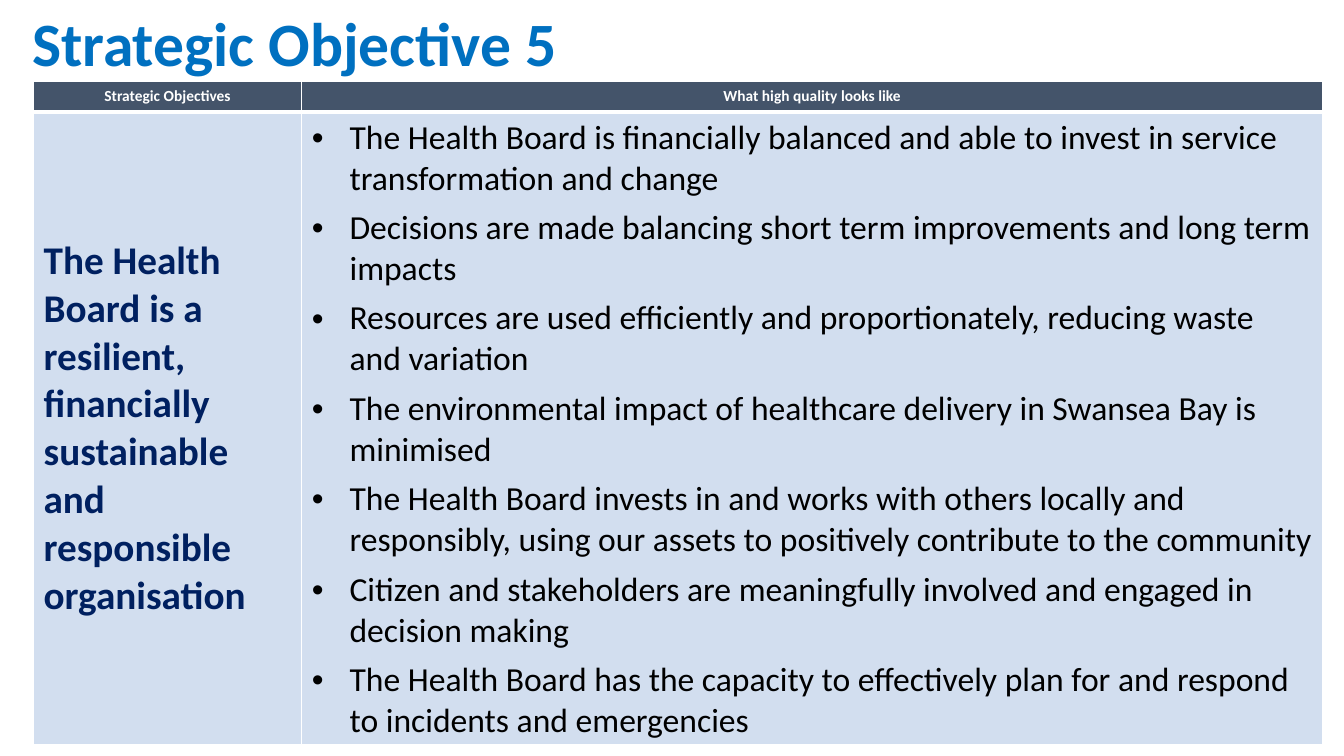
from lxml.etree import SubElement
from pptx import Presentation
from pptx.dml.color import RGBColor
from pptx.enum.text import MSO_ANCHOR, MSO_AUTO_SIZE, PP_ALIGN
from pptx.oxml import parse_xml
from pptx.oxml.ns import nsdecls, qn
from pptx.util import Pt

HEADINGS = ["Strategic Objectives", "What high quality looks like"]
OBJECTIVE = "The Health Board is a resilient, financially sustainable and responsible organisation"
QUALITIES = [
    "The Health Board is financially balanced and able to invest in service transformation and change",
    "Decisions are made balancing short term improvements and long term impacts",
    "Resources are used efficiently and proportionately, reducing waste and variation",
    "The environmental impact of healthcare delivery in Swansea Bay is minimised",
    "The Health Board invests in and works with others locally and responsibly, "
    "using our assets to positively contribute to the community",
    "Citizen and stakeholders are meaningfully involved and engaged in decision making",
    "The Health Board has the capacity to effectively plan for and respond to incidents and emergencies",
]


def add_span(para, text, size, color, bold):
    span = para.add_run()
    span.text = text
    span.font.name = "Calibri"
    span.font.size = Pt(size)
    span.font.bold = bold
    span.font.color.rgb = RGBColor.from_string(color)


def style_cell(cell, fill, bottom_width):
    cell.vertical_anchor = MSO_ANCHOR.MIDDLE
    cell.fill.solid()
    cell.fill.fore_color.rgb = RGBColor.from_string(fill)
    properties = cell._tc.get_or_add_tcPr()
    # Borders come before the fill in the cell properties
    for index, side in enumerate("LRTB"):
        width = Pt(bottom_width if side == "B" else 1)
        properties.insert(index, parse_xml(
            f'<a:ln{side} {nsdecls("a")} w="{width}"><a:solidFill>'
            f'<a:srgbClr val="FFFFFF"/></a:solidFill></a:ln{side}>'))


deck = Presentation()
deck.slide_width, deck.slide_height = Pt(960), Pt(540)
page = deck.slides.add_slide(deck.slide_layouts[5])

# Table with a header row and one objective
frame = page.shapes.add_table(2, 2, Pt(24), Pt(57.8), Pt(920.8), Pt(474.3))
table = frame.table
table.columns[0].width, table.columns[1].width = Pt(191.5), Pt(729.3)
table.rows[0].height, table.rows[1].height = Pt(22.3), Pt(452)

# Header row
for cell, heading in zip(table.rows[0].cells, HEADINGS):
    style_cell(cell, "44546A", 3)
    para = cell.text_frame.paragraphs[0]
    para.alignment = PP_ALIGN.CENTER
    add_span(para, heading, 11, "FFFFFF", True)

# Objective and its qualities
objective_cell, quality_cell = table.rows[1].cells
for cell in (objective_cell, quality_cell):
    style_cell(cell, "D2DEEF", 1)
add_span(objective_cell.text_frame.paragraphs[0], OBJECTIVE, 28, "002060", True)

body = quality_cell.text_frame
for index, quality in enumerate(QUALITIES):
    para = body.add_paragraph() if index else body.paragraphs[0]
    para.space_after = Pt(6)
    settings = para._p.get_or_add_pPr()
    settings.set("marL", str(Pt(27)))
    settings.set("indent", str(-Pt(27)))
    SubElement(settings, qn("a:buFont")).set("typeface", "Arial")
    SubElement(settings, qn("a:buChar")).set("char", "•")
    add_span(para, quality, 24, "000000", False)

# Title
title = page.shapes.title
title.left, title.top, title.width, title.height = Pt(15.8), Pt(0), Pt(393), Pt(60.5)
title.text_frame.word_wrap = False
title.text_frame.auto_size = MSO_AUTO_SIZE.SHAPE_TO_FIT_TEXT
title.text_frame.vertical_anchor = MSO_ANCHOR.TOP
para = title.text_frame.paragraphs[0]
para.alignment = PP_ALIGN.LEFT
add_span(para, "Strategic Objective 5", 44, "0070C0", True)

deck.save("out.pptx")
